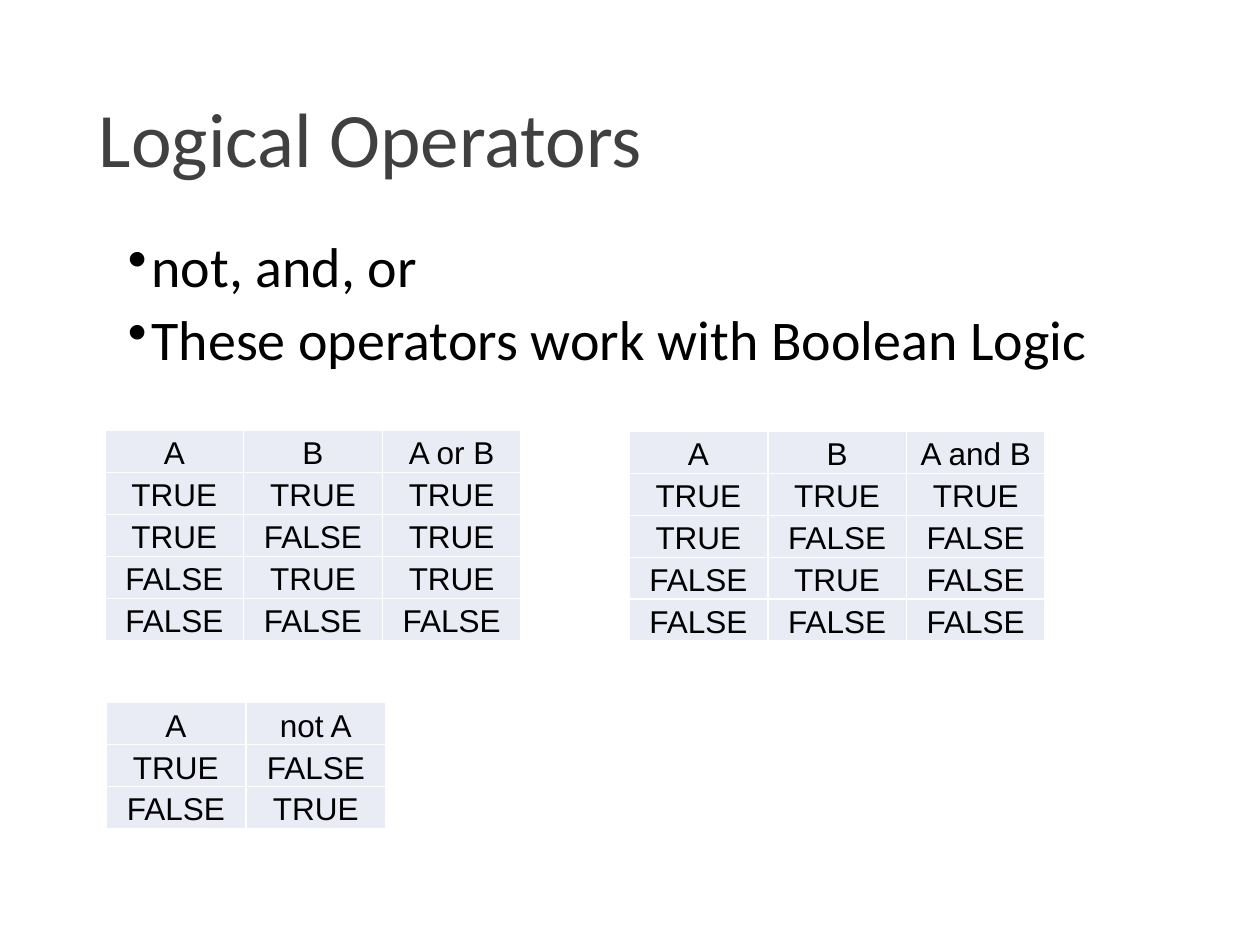
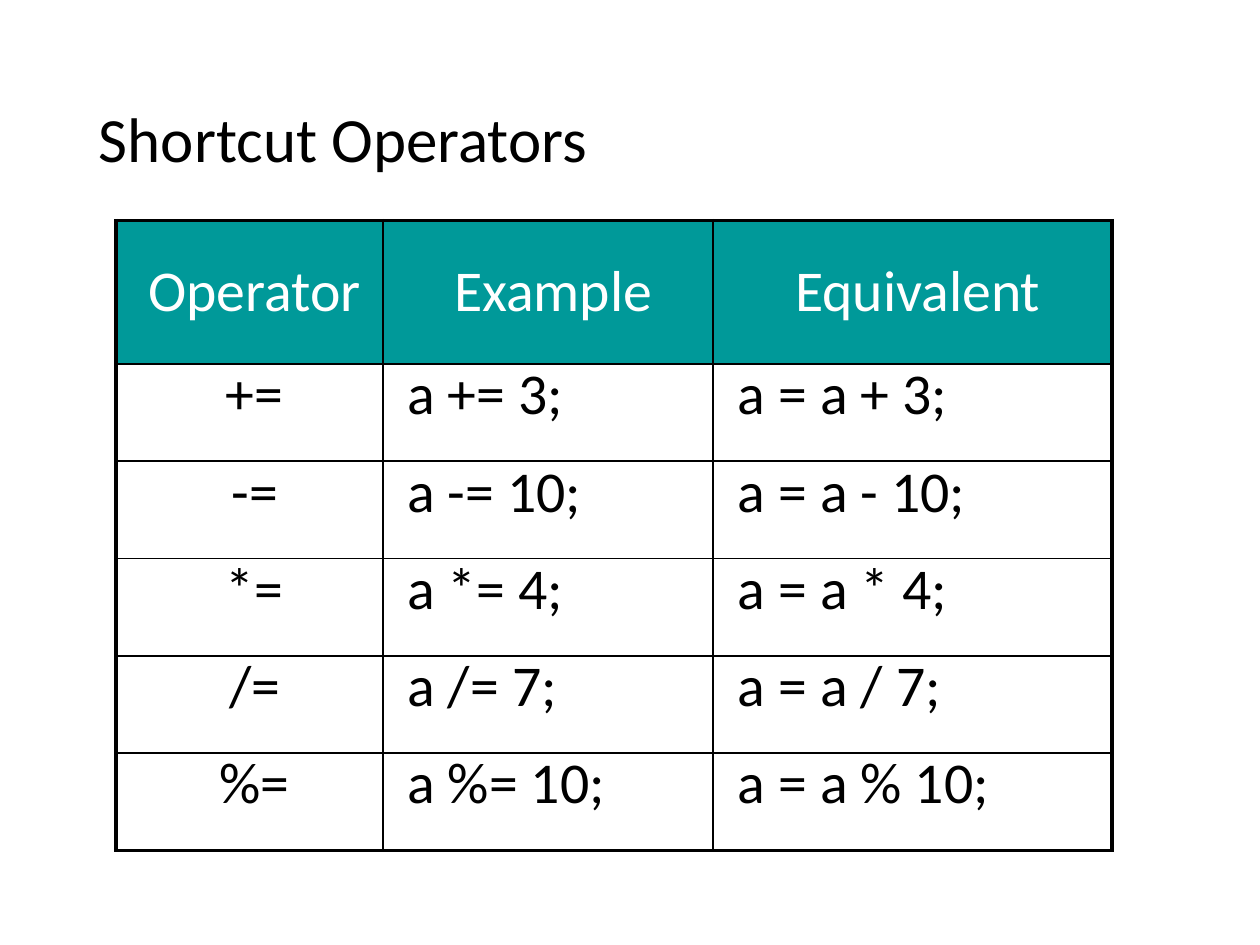
from pptx import Presentation, util as u
from pptx.dml.color import RGBColor
from pptx.enum.text import MSO_ANCHOR, PP_ALIGN
from pptx.oxml import parse_xml
from pptx.oxml.ns import nsdecls

BLACK, WHITE = "000000", "FFFFFF"
GREY, TEAL, PALE = "404040", "009999", "E9EBF5"
THIN, THICK = 1, 2.25


def write(para, words, name, size, color, indent=0, bullet=None, **layout):
    """Fill one paragraph; layout holds paragraph attributes."""
    props = para._p.get_or_add_pPr()
    if indent:
        props.set("marL", str(u.Pt(indent)))
    if bullet:
        props.set("indent", str(-u.Pt(indent)))
        props.append(parse_xml(f'<a:buChar {nsdecls("a")} char="{bullet}"/>'))
    for key, value in layout.items():
        setattr(para, key, value)
    span = para.add_run()
    span.text = words
    for key, value in {"name": name, "size": u.Pt(size)}.items():
        setattr(span.font, key, value)
    span.font.color.rgb = RGBColor.from_string(color)


def add_grid(page, rows, left, top, widths, heights, line, frame, margin):
    """Add a plain table with ruled cells and return its cells by (row, column)."""
    table = page.shapes.add_table(len(rows), len(widths), u.Pt(left), u.Pt(top),
                                  u.Pt(sum(widths)), u.Pt(sum(heights))).table
    table.first_row = table.horz_banding = False
    for column, width in zip(table.columns, widths):
        column.width = u.Pt(width)
    for row, height in zip(table.rows, heights):
        row.height = u.Pt(height)
    cells = {}
    for r in range(len(rows)):
        for c in range(len(widths)):
            cell = cells[r, c] = table.cell(r, c)
            for side in ("left", "right", "top", "bottom"):
                setattr(cell, f"margin_{side}", u.Pt(margin))
            # The outer edge of the table takes the frame width
            edges = {"L": c == 0, "R": c == len(widths) - 1,
                     "T": r == 0, "B": r == len(rows) - 1}
            for side, outer in edges.items():
                cell._tc.get_or_add_tcPr().append(parse_xml(
                    f'<a:ln{side} {nsdecls("a")} w="{u.Pt(frame if outer else THIN)}">'
                    f'<a:solidFill><a:srgbClr val="{line}"/></a:solidFill></a:ln{side}>'))
    return cells


deck = Presentation()
deck.slide_width, deck.slide_height = u.Pt(720), u.Pt(540)

# Pages with their titles
pages = []
for title, size, color in (("Logical Operators", 44, GREY), ("Shortcut Operators", 36, BLACK)):
    page = deck.slides.add_slide(deck.slide_layouts[6])
    box = page.shapes.add_textbox(u.Pt(49.5), u.Pt(29), u.Pt(621), u.Pt(104.5))
    box.text_frame.word_wrap = True
    box.text_frame.vertical_anchor = MSO_ANCHOR.MIDDLE
    write(box.text_frame.paragraphs[0], title, "Calibri", size, color, line_spacing=0.9)
    pages.append(page)
logic_page, shortcut_page = pages

# Bullets on logic
box = logic_page.shapes.add_textbox(u.Pt(66), u.Pt(133), u.Pt(621), u.Pt(343))
box.text_frame.word_wrap = True
for i, words in enumerate(("not, and, or", "These operators work with Boolean Logic")):
    para = box.text_frame.add_paragraph() if i else box.text_frame.paragraphs[0]
    write(para, words, "Calibri", 32, BLACK, indent=13.5, bullet="•",
          line_spacing=0.9, space_before=u.Pt(7.5 if i else 0))

# Truth tables, worked out from the operators
pairs = [(a, b) for a in (True, False) for b in (True, False)]
truth_tables = (
    (60, 246, 79.25, [("A", "B", "A or B")] + [(a, b, a or b) for a, b in pairs]),
    (359.5, 246.5, 79.25, [("A", "B", "A and B")] + [(a, b, a and b) for a, b in pairs]),
    (60.5, 401.5, 80, [("A", "not A")] + [(a, not a) for a in (True, False)]),
)
for left, top, width, rows in truth_tables:
    cells = add_grid(logic_page, rows, left, top, [width] * len(rows[0]),
                     [24] * len(rows), WHITE, THIN, 0.5)
    for (r, c), cell in cells.items():
        cell.fill.solid()
        cell.fill.fore_color.rgb = RGBColor.from_string(PALE)
        cell.vertical_anchor = MSO_ANCHOR.BOTTOM
        value = rows[r][c]
        write(cell.text_frame.paragraphs[0], value if r == 0 else str(value).upper(),
              "Arial", 18, BLACK, alignment=PP_ALIGN.CENTER)

# Shortcut operators, each row built from the sign and its operand
rows = [("Operator", "Example", "Equivalent")]
for sign, operand in (("+", 3), ("-", 10), ("*", 4), ("/", 7), ("%", 10)):
    rows.append((f"{sign}=", f"a {sign}= {operand};", f"a = a {sign} {operand};"))
cells = add_grid(shortcut_page, rows, 66.25, 126, [152.5, 188.75, 228],
                 [82] + [55.6] * 5, BLACK, THICK, 0)
for (r, c), cell in cells.items():
    header = r == 0
    centred = header or c == 0
    if header:
        cell.fill.solid()
        cell.fill.fore_color.rgb = RGBColor.from_string(TEAL)
    else:
        cell.fill.background()
    cell.vertical_anchor = MSO_ANCHOR.MIDDLE if header else MSO_ANCHOR.TOP
    write(cell.text_frame.paragraphs[0], rows[r][c], "Calibri", 33,
          WHITE if header else BLACK, indent=6 if centred else 14, line_spacing=0.9,
          alignment=PP_ALIGN.CENTER if centred else PP_ALIGN.LEFT)

deck.save("out.pptx")
